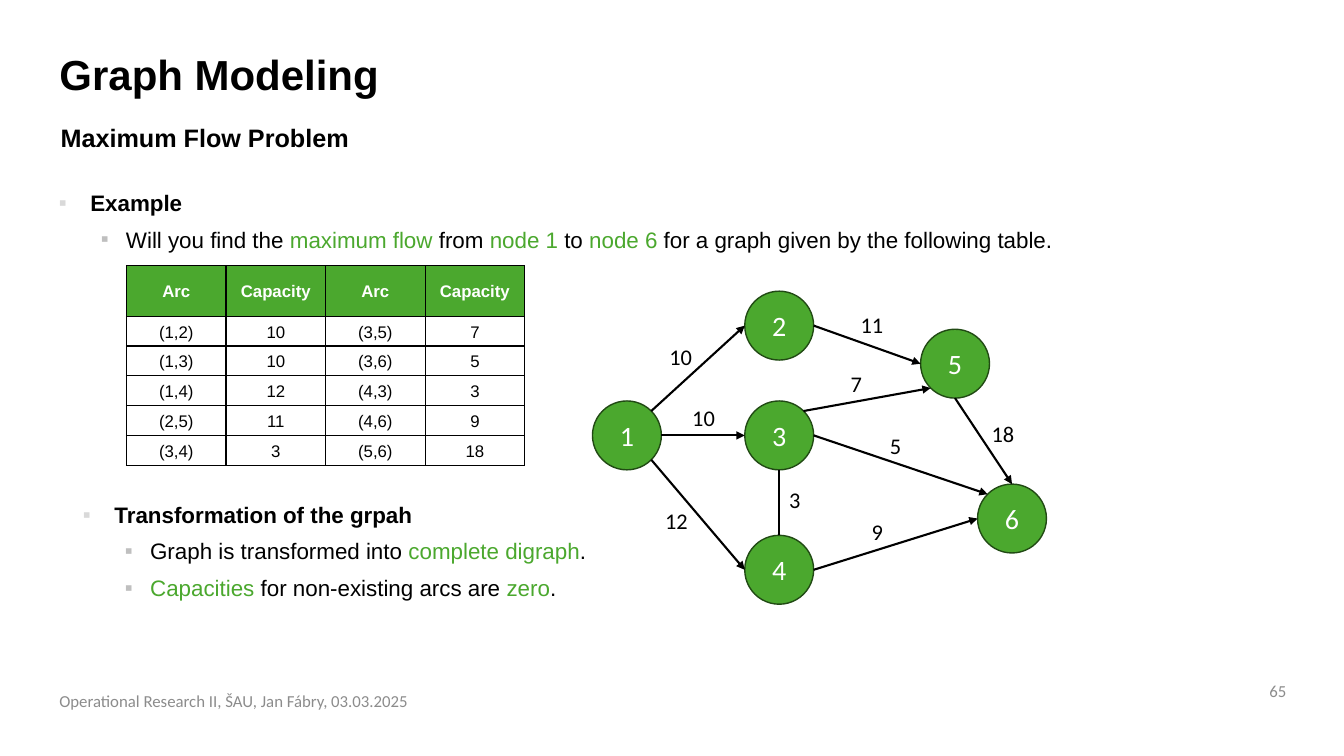
"""Build the maximum flow slide with its table, graph and notes."""
from math import cos, radians, sin
from lxml.etree import SubElement as Sub
from pptx import Presentation
from pptx.dml.color import RGBColor as Rgb
from pptx.enum.shapes import MSO_CONNECTOR as Link, MSO_SHAPE as Form
from pptx.enum.text import MSO_ANCHOR as Anchor, MSO_AUTO_SIZE as Fit, PP_ALIGN as Align
from pptx.oxml.ns import qn
from pptx.util import Pt

GREEN, DARK, BLACK, WHITE, GRAY = "4BA82E", "214A14", "000000", "FFFFFF", "8C8C8C"
TITLE = "Graph Modeling"
SUB = "Maximum Flow Problem"
FOOT = "Operational Research II, ŠAU, Jan Fábry, 03.03.2025"
PAGE = "65"

# Text between bars is green.
TASK = [
    (0, "Example"),
    (1, "Will you find the |maximum flow |from |node 1| to |node 6 |"
        "for a graph given by the following table."),
]
NOTES = [
    (0, "Transformation of the grpah"),
    (1, "Graph is transformed into |complete digraph|."),
    (1, "|Capacities |for non-existing arcs are |zero|."),
]
LEVELS = [
    dict(left=22.5, hang=22.5, gap=10, mark="D9D9D9", bold=True),
    dict(left=48, hang=18, gap=5, mark="BFBFBF", bold=False),
]
ROWS = [
    ("Arc", "Capacity", "Arc", "Capacity"),
    ("(1,2)", "10", "(3,5)", "7"),
    ("(1,3)", "10", "(3,6)", "5"),
    ("(1,4)", "12", "(4,3)", "3"),
    ("(2,5)", "11", "(4,6)", "9"),
    ("(3,4)", "3", "(5,6)", "18"),
]
NODES = {
    "1": (447.8, 311), "2": (556.6, 232.6), "3": (556.6, 311),
    "4": (556.6, 407), "5": (682.2, 259.8), "6": (722.9, 370.4),
}
SIDES = {"E": 0, "SE": 45, "S": 90, "SW": 135, "W": 180, "NW": 225, "N": 270, "NE": 315}
ARCS = [
    ("1", "NE", "2", "W", True, "10", 471, 241.6),
    ("1", "SE", "4", "W", True, "12", 468, 359),
    ("1", "E", "3", "W", True, "10", 487.4, 285.1),
    ("2", "E", "5", "W", True, "11", 607.7, 218.9),
    ("3", "NE", "5", "SW", True, "7", 600.5, 261),
    ("3", "E", "6", "NW", True, "5", 628.6, 305.3),
    ("4", "N", "3", "S", False, "3", 556.6, 344),
    ("4", "E", "6", "W", True, "9", 615.6, 366.5),
    ("5", "S", "6", "N", True, "18", 701.3, 296.6),
]
SIZE = 49.2


def tint(code):
    return Rgb.from_string(code)


def style(run, size, color, bold=False, face="Arial"):
    font = run.font
    font.size, font.bold, font.name = Pt(size), bold, face
    font.color.rgb = tint(color)


def place(shape, *area):
    shape.left, shape.top, shape.width, shape.height = map(Pt, area)


def label(text, area, size, color, bold=False, face="Calibri",
          wrap=True, mid=False, align=Align.LEFT):
    frame = slide.shapes.add_textbox(*map(Pt, area)).text_frame
    frame.word_wrap = wrap
    frame.vertical_anchor = Anchor.MIDDLE if mid else Anchor.TOP
    frame.text = text
    para = frame.paragraphs[0]
    para.alignment = align
    style(para.runs[0], size, color, bold, face)


def bullets(frame, items):
    frame.word_wrap, frame.auto_size = True, Fit.NONE
    for i, (depth, text) in enumerate(items):
        para = frame.add_paragraph() if i else frame.paragraphs[0]
        look = LEVELS[depth]
        para.level = depth
        para.line_spacing = 1.1
        para.space_before = Pt(look["gap"] if i else 0)
        para.space_after = Pt(0)
        props = para._p.get_or_add_pPr()
        props.set("marL", str(Pt(look["left"])))
        props.set("indent", str(-Pt(look["hang"])))
        Sub(Sub(props, qn("a:buClr")), qn("a:srgbClr"), val=look["mark"])
        Sub(props, qn("a:buFont"), typeface="Arial")
        Sub(props, qn("a:buChar"), char="▪")
        for n, part in enumerate(text.split("|")):
            if part:
                run = para.add_run()
                run.text = part
                style(run, 16, GREEN if n % 2 else BLACK, look["bold"])


def border(cell):
    props = cell._tc.get_or_add_tcPr()
    for i, side in enumerate(("lnL", "lnR", "lnT", "lnB")):
        line = Sub(props, qn("a:" + side), w=str(Pt(1)))
        Sub(Sub(line, qn("a:solidFill")), qn("a:srgbClr"), val=BLACK)
        props.insert(i, line)


def grid():
    table = slide.shapes.add_table(
        len(ROWS), len(ROWS[0]), Pt(90.4), Pt(189.8), Pt(284.4), Pt(142.5)).table
    for col in table.columns:
        col.width = Pt(71.1)
    for r, texts in enumerate(ROWS):
        table.rows[r].height = Pt(21.3 if r else 36)
        for c, text in enumerate(texts):
            cell = table.cell(r, c)
            cell.text = text
            cell.margin_left = cell.margin_right = cell.margin_top = Pt(0.7)
            cell.margin_bottom = 0
            cell.vertical_anchor = Anchor.MIDDLE
            cell.fill.solid()
            cell.fill.fore_color.rgb = tint(WHITE if r else GREEN)
            para = cell.text_frame.paragraphs[0]
            para.alignment = Align.CENTER
            para.line_spacing, para.space_after = 1.07, Pt(8)
            style(para.runs[0], 12, BLACK if r else WHITE, not r)
            border(cell)


def node(name, x, y):
    disc = slide.shapes.add_shape(
        Form.OVAL, Pt(x - SIZE / 2), Pt(y - SIZE / 2), Pt(SIZE), Pt(SIZE))
    disc.shadow.inherit = False
    disc.fill.solid()
    disc.fill.fore_color.rgb = tint(GREEN)
    disc.line.color.rgb, disc.line.width = tint(DARK), Pt(1)
    frame = disc.text_frame
    frame.text = name
    frame.vertical_anchor = Anchor.MIDDLE
    frame.paragraphs[0].alignment = Align.CENTER
    style(frame.paragraphs[0].runs[0], 20, WHITE, face="Calibri")


def edge(name, side):
    x, y = NODES[name]
    turn = radians(SIDES[side])
    return Pt(x + SIZE / 2 * cos(turn)), Pt(y + SIZE / 2 * sin(turn))


def arc(tail, out, head, into, arrow):
    line = slide.shapes.add_connector(Link.STRAIGHT, *edge(tail, out), *edge(head, into))
    line.line.color.rgb, line.line.width = tint(BLACK), Pt(1.5)
    if arrow:
        Sub(line.line._get_or_add_ln(), qn("a:tailEnd"), type="triangle")
    Sub(line._element.spPr, qn("a:effectLst"))


deck = Presentation()
deck.slide_width, deck.slide_height = Pt(960), Pt(540)
slide = deck.slides.add_slide(deck.slide_layouts[1])

title, body = slide.shapes.title, slide.placeholders[1]
place(title, 35.3, 35.3, 729.4, 41)
frame = title.text_frame
frame.text = TITLE
frame.auto_size, frame.vertical_anchor = Fit.NONE, Anchor.TOP
frame.paragraphs[0].alignment = Align.LEFT
frame.paragraphs[0].line_spacing = 0.9
style(frame.paragraphs[0].runs[0], 30, BLACK, True)

place(body, 34.8, 129.6, 851.8, 96.5)
bullets(body.text_frame, TASK)
label(SUB, (36.2, 84.2, 752.4, 28.8), 18, BLACK, True, "Arial")
label(FOOT, (35.3, 486, 516.2, 28.8), 12, GRAY, mid=True)
label(PAGE, (875.9, 481.7, 50, 23.8), 12, GRAY, mid=True, align=Align.RIGHT)

grid()
for name, (x, y) in NODES.items():
    node(name, x, y)
for *ends, text, x, y in ARCS:
    arc(*ends)
    label(text, (x, y, 14.6 + 8.2 * len(text), 26.6), 16, BLACK, wrap=False)

notes = slide.shapes.add_textbox(Pt(52.2), Pt(352.5), Pt(398.9), Pt(96.5))
bullets(notes.text_frame, NOTES)

deck.save("out.pptx")
